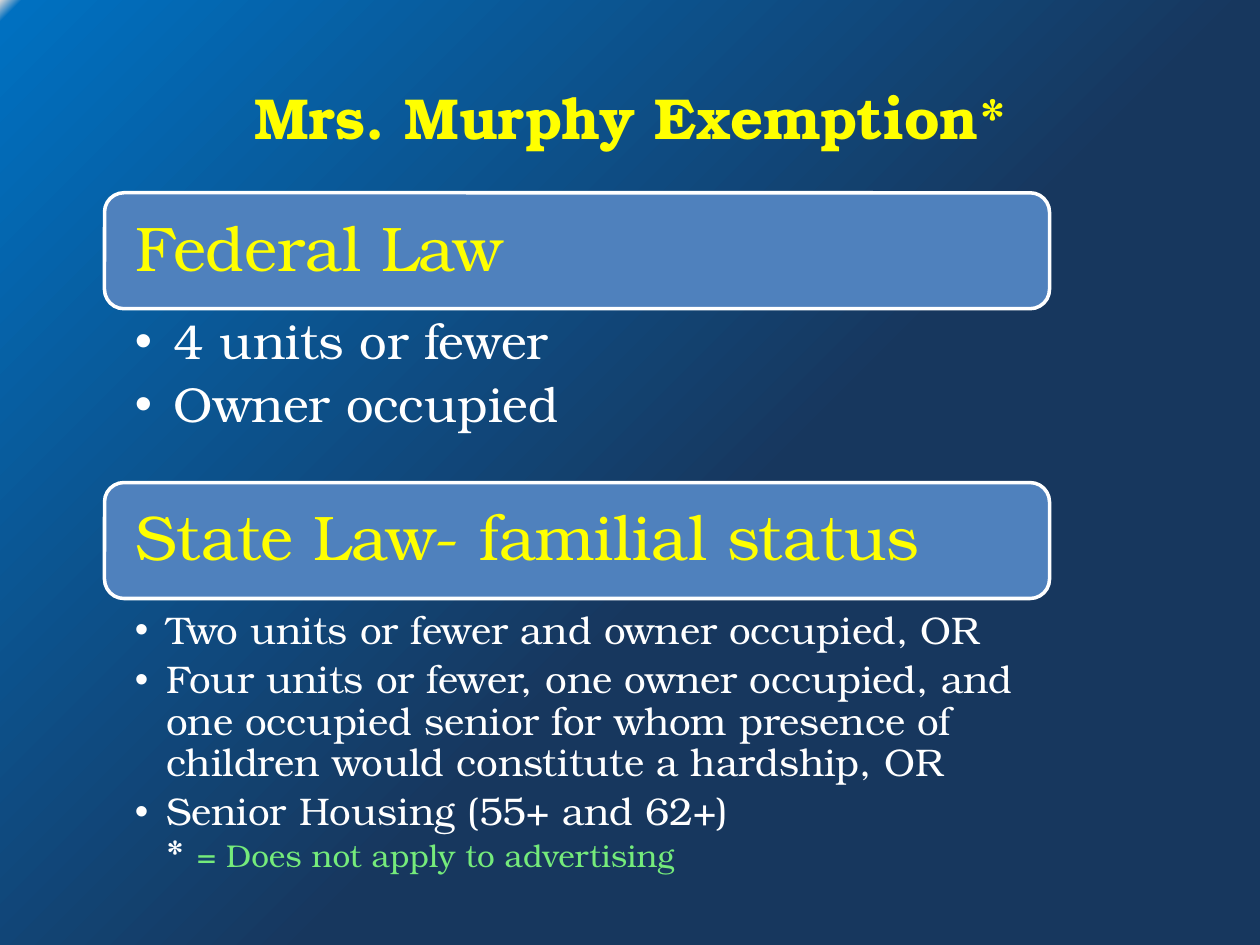
from lxml.etree import SubElement
from pptx import Presentation
from pptx.dml.color import RGBColor
from pptx.enum.shapes import MSO_SHAPE
from pptx.enum.text import MSO_ANCHOR, MSO_AUTO_SIZE, PP_ALIGN
from pptx.oxml.ns import qn
from pptx.util import Inches, Pt

FONT = "TeX Gyre Bonum"
NAVY = RGBColor(0x17, 0x37, 0x5E)
BLUE = RGBColor(0x00, 0x70, 0xC0)
SILVER = RGBColor(0xD9, 0xD9, 0xD9)
STEEL = RGBColor(0x4F, 0x81, 0xBD)
YELLOW = RGBColor(0xFF, 0xFF, 0x00)
WHITE = RGBColor(0xFF, 0xFF, 0xFF)
GREEN = RGBColor(0x75, 0xEB, 0x7B)

COLUMN_LEFT, COLUMN_WIDTH = 0.83, 7.5
HEADER_HEIGHT = 0.92
TWO_CONTENT_LAYOUT = 3


def place(shape, left, top, width, height):
    shape.left, shape.top = Inches(left), Inches(top)
    shape.width, shape.height = Inches(width), Inches(height)


def add_text(paragraph, text, size, color, bold=False):
    run = paragraph.add_run()
    run.text = text
    run.font.name = FONT
    run.font.size = Pt(size)
    run.font.bold = bold
    run.font.color.rgb = color


def format_frame(frame, anchor, left=0.1, right=0.1, vertical=0.05):
    frame.word_wrap = True
    frame.auto_size = MSO_AUTO_SIZE.NONE
    frame.vertical_anchor = anchor
    frame.margin_left, frame.margin_right = Inches(left), Inches(right)
    frame.margin_top = frame.margin_bottom = Inches(vertical)


def set_background(slide):
    fill = slide.background.fill
    fill.gradient()
    fill.gradient_angle = 135
    stops = slide.element.find(".//" + qn("a:gsLst"))
    for stop in list(stops):
        stops.remove(stop)
    for percent, color in ((43, NAVY), (99, BLUE), (100, SILVER)):
        stop = SubElement(stops, qn("a:gs"), pos=str(percent * 1000))
        SubElement(stop, qn("a:srgbClr"), val=str(color))


def set_title(slide, text):
    title = slide.shapes.title
    place(title, 0.5, 0.3, 9, 1.25)
    format_frame(title.text_frame, MSO_ANCHOR.MIDDLE)
    paragraph = title.text_frame.paragraphs[0]
    paragraph.alignment = PP_ALIGN.CENTER
    add_text(paragraph, text, 33, YELLOW, bold=True)


def add_header(slide, text, top):
    header = slide.shapes.add_shape(MSO_SHAPE.ROUNDED_RECTANGLE, 0, 0, 0, 0)
    place(header, COLUMN_LEFT, top, COLUMN_WIDTH, HEADER_HEIGHT)
    header.shadow.inherit = False
    header.fill.solid()
    header.fill.fore_color.rgb = STEEL
    header.line.color.rgb = WHITE
    header.line.width = Pt(2)
    format_frame(header.text_frame, MSO_ANCHOR.MIDDLE, left=0.2, right=0.2)
    paragraph = header.text_frame.paragraphs[0]
    paragraph.alignment = PP_ALIGN.LEFT
    paragraph.line_spacing = 0.9
    add_text(paragraph, text, 36, YELLOW)


def fill_list(placeholder, items, top, height, size, indent, right, vertical):
    """Write bulleted items and return the last paragraph."""
    place(placeholder, COLUMN_LEFT, top, COLUMN_WIDTH, height)
    frame = placeholder.text_frame
    format_frame(frame, MSO_ANCHOR.TOP, 0.24, right, vertical)
    for index, item in enumerate(items):
        paragraph = frame.add_paragraph() if index else frame.paragraphs[0]
        properties = paragraph._p.get_or_add_pPr()
        properties.set("marL", str(Inches(indent)))
        properties.set("indent", str(-Inches(indent)))
        SubElement(properties, qn("a:buFont"), typeface="Arial")
        SubElement(properties, qn("a:buChar"), char="•")
        paragraph.line_spacing = 0.9
        paragraph.space_before = Pt(0)
        paragraph.space_after = Pt(size * 0.2)
        add_text(paragraph, item, size, WHITE)
    return paragraph


def main():
    presentation = Presentation()
    presentation.slide_width, presentation.slide_height = Inches(10), Inches(7.5)
    layout = presentation.slide_layouts[TWO_CONTENT_LAYOUT]
    slide = presentation.slides.add_slide(layout)
    federal_list, state_list = slide.placeholders[1], slide.placeholders[2]

    set_background(slide)
    set_title(slide, "Mrs. Murphy Exemption*")

    add_header(slide, "Federal Law", top=1.53)
    fill_list(federal_list, ["4 units or fewer", "Owner occupied"],
              top=2.47, height=1.43, size=28, indent=0.31, right=0.28, vertical=0.05)

    add_header(slide, "State Law- familial status", top=3.83)
    last_item = fill_list(
        state_list,
        ["Two units or fewer and owner occupied, OR",
         "Four units or fewer, one owner occupied, and one occupied senior "
         "for whom presence of children would constitute a hardship, OR",
         "Senior Housing (55+ and 62+)"],
        top=4.82, height=2.16, size=22, indent=0.25, right=0.17, vertical=0.03)
    last_item.add_line_break()
    add_text(last_item, "* ", 22, WHITE, bold=True)
    add_text(last_item, "= Does not apply to advertising", 18, GREEN)

    presentation.save("out.pptx")


if __name__ == "__main__":
    main()
